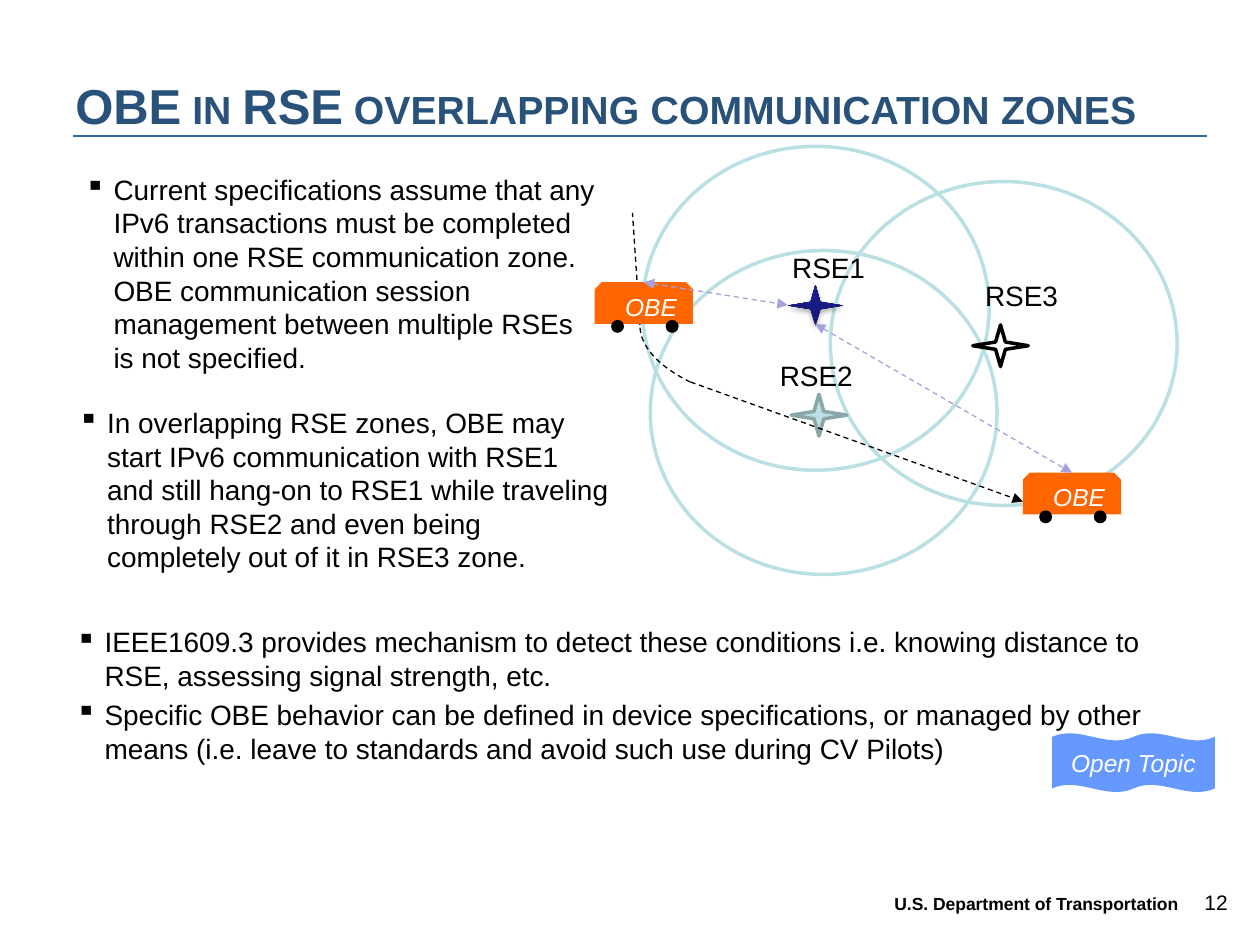
"""Build the slide on OBE behaviour in overlapping RSE communication zones."""
from lxml import etree
from pptx import Presentation
from pptx import util as u
from pptx.dml.color import RGBColor
from pptx.enum import dml, shapes, text
from pptx.oxml.ns import qn

SHAPE = shapes.MSO_SHAPE
ALIGN = text.PP_ALIGN
ANCHOR = text.MSO_ANCHOR


def rgb(value):
    return RGBColor.from_string(value)


class Deck:
    font = "Arial"
    ink, title_ink, rule = "000000", "29527B", "336699"
    zone, zone_edge, obe = "BBE0E3", "8AA6A8", "FF6600"
    radio, topic, white = "A3A3E0", "6699FF", "FFFFFF"

    def __init__(self):
        self.prs = Presentation()
        self.prs.slide_width, self.prs.slide_height = u.Cm(25.4), u.Cm(19.05)
        self.s = self.prs.slides.add_slide(self.prs.slide_layouts[6])

    def run(self, p, words, size, color, bold=False, italic=False):
        r = p.add_run()
        r.text = words
        r.font.name, r.font.size = self.font, u.Pt(size)
        r.font.bold, r.font.italic = bold, italic
        r.font.color.rgb = rgb(color)
        return r

    def textbox(self, x, y, w, h, wrap=True, anchor=ANCHOR.TOP):
        sp = self.s.shapes.add_textbox(u.Cm(x), u.Cm(y), u.Cm(w), u.Cm(h))
        tf = sp.text_frame
        tf.word_wrap, tf.vertical_anchor = wrap, anchor
        return tf

    def label(self, words, x, y, w, h, size, color=ink, bold=False,
              align=ALIGN.LEFT, wrap=True, anchor=ANCHOR.TOP):
        p = self.textbox(x, y, w, h, wrap, anchor).paragraphs[0]
        p.alignment = align
        return p, self.run(p, words, size, color, bold)

    def bullets(self, items, x, y, w, h):
        tf = self.textbox(x, y, w, h)
        for i, item in enumerate(items):
            p = tf.add_paragraph() if i else tf.paragraphs[0]
            p.space_before = u.Pt(3.2 if i else 0)
            pPr = p._p.get_or_add_pPr()
            pPr.set("marL", str(u.Cm(1.07)))
            pPr.set("indent", str(u.Cm(-0.58)))
            etree.SubElement(pPr, qn("a:buChar"), char="▪")
            self.run(p, item, 16, self.ink)

    def shape(self, kind, x, y, w, h, fill=None, line=None, width=2):
        sp = self.s.shapes.add_shape(kind, u.Cm(x), u.Cm(y), u.Cm(w), u.Cm(h))
        sp.shadow.inherit = False
        if fill:
            sp.fill.solid()
            sp.fill.fore_color.rgb = rgb(fill)
        else:
            sp.fill.background()
        if line:
            sp.line.color.rgb, sp.line.width = rgb(line), u.Pt(width)
        else:
            sp.line.fill.background()
        return sp

    def caption(self, sp, words, align, anchor):
        tf = sp.text_frame
        tf.vertical_anchor = anchor
        p = tf.paragraphs[0]
        p.alignment = align
        self.run(p, words, 14, self.white, italic=True)

    def line(self, start, end, color, width=0.75, dashed=True, ends=()):
        points = [u.Cm(v) for v in (*start, *end)]
        sp = self.s.shapes.add_connector(shapes.MSO_CONNECTOR.STRAIGHT, *points)
        sp.line.color.rgb, sp.line.width = rgb(color), u.Pt(width)
        if dashed:
            sp.line.dash_style = dml.MSO_LINE.DASH
        for end_name in ends:
            etree.SubElement(sp.line._get_or_add_ln(), qn(f"a:{end_name}"), type="triangle")
        etree.SubElement(sp._element.spPr, qn("a:effectLst"))

    def star(self, x, y, fill, line=None):
        return self.shape(SHAPE.STAR_4_POINT, x, y, 1.12, 0.84, fill, line)

    def glossy_star(self, x, y):
        sp = self.star(x, y, self.ink)
        sp.fill.gradient()
        sp.fill.gradient_angle = 90
        for stop, color in zip(sp.fill.gradient_stops, ("171771", "1C1C96")):
            stop.color.rgb = rgb(color)
        effects = sp._element.spPr.find(qn("a:effectLst"))
        shadow = etree.SubElement(effects, qn("a:outerShdw"), blurRad=str(u.Pt(3.1)),
                                  dist=str(u.Pt(1.8)), dir="5400000", rotWithShape="0")
        color = etree.SubElement(shadow, qn("a:srgbClr"), val=self.ink)
        etree.SubElement(color, qn("a:alpha"), val="35000")

    def vehicle(self, x, y):
        body = self.shape(SHAPE.SNIP_2_SAME_RECTANGLE, x, y, 1.98, 0.84, self.obe)
        self.caption(body, "OBE", ALIGN.RIGHT, ANCHOR.TOP)
        for dx in (0.33, 1.43):
            self.shape(SHAPE.OVAL, x + dx, y + 0.76, 0.26, 0.26, self.ink)

    def path_bend(self, x, y, w, h):
        sp = self.shape(SHAPE.ARC, x, y, w, h, line=self.ink, width=0.75)
        sp.adjustments[0], sp.adjustments[1] = 204.975, 0
        sp.rotation = 180
        sp.line.dash_style = dml.MSO_LINE.DASH


def main():
    d = Deck()
    d.line((1.47, 2.74), (24.33, 2.74), d.rule, 1.5, dashed=False)
    d.label("12", 23.93, 17.81, 1.07, 0.76, 12, align=ALIGN.RIGHT)
    p, r = d.label("U.S. Department of Transportation", 17.78, 17.98, 6.99, 0.58, 10, bold=True)
    p.line_spacing = u.Pt(9)
    p, r = d.label("OBE in RSE overlapping communication zones", 1.27, 1.07, 22.86, 2.11,
                   28, d.title_ink, bold=True, anchor=ANCHOR.MIDDLE)
    r.font._element.set("cap", "small")
    d.bullets(["Current specifications assume that any IPv6 transactions must be completed "
               "within one RSE communication zone. OBE communication session management "
               "between multiple RSEs is not specified."], 0.97, 3.35, 11.3, 4.24)

    for x, y in ((12.95, 2.95), (13.11, 5.05), (16.74, 3.66)):
        d.shape(SHAPE.OVAL, x, y, 6.99, 6.53, line=d.zone)
    d.star(19.61, 6.55, d.white, d.ink)
    d.glossy_star(15.88, 5.74)
    d.star(15.95, 7.95, d.zone, d.zone_edge)

    both = ("headEnd", "tailEnd")
    d.vehicle(20.62, 9.53)
    d.path_bend(12.9, 4.75, 8.94, 3.61)
    d.line((13.92, 7.7), (20.62, 10.11), d.ink, ends=("tailEnd",))
    d.line((16.43, 6.53), (21.61, 9.53), d.radio, ends=both)
    d.line((12.9, 6.55), (12.75, 4.29), d.ink)
    d.vehicle(11.99, 5.69)
    d.line((12.98, 5.69), (15.88, 6.15), d.radio, ends=both)
    for name, x, y in (("RSE1", 15.72, 4.93), ("RSE2", 15.47, 7.11), ("RSE3", 19.61, 5.49)):
        d.label(name, x, y, 2.01, 0.94, 16, wrap=False)

    d.bullets(["In overlapping RSE zones, OBE may start IPv6 communication with RSE1 and still "
               "hang-on to RSE1 while traveling through RSE2 and even being completely out of "
               "it in RSE3 zone."], 0.84, 8.05, 11.68, 4.24)
    d.bullets(["IEEE1609.3 provides mechanism to detect these conditions i.e. knowing distance "
               "to RSE, assessing signal strength, etc.",
               "Specific OBE behavior can be defined in device specifications, or managed by "
               "other means (i.e. leave to standards and avoid such use during CV Pilots)"],
              0.79, 12.47, 23.16, 4.24)
    wave = d.shape(SHAPE.DOUBLE_WAVE, 21.21, 14.78, 3.28, 1.19, d.topic)
    d.caption(wave, "Open Topic", ALIGN.CENTER, ANCHOR.MIDDLE)
    d.prs.save("out.pptx")


if __name__ == "__main__":
    main()
